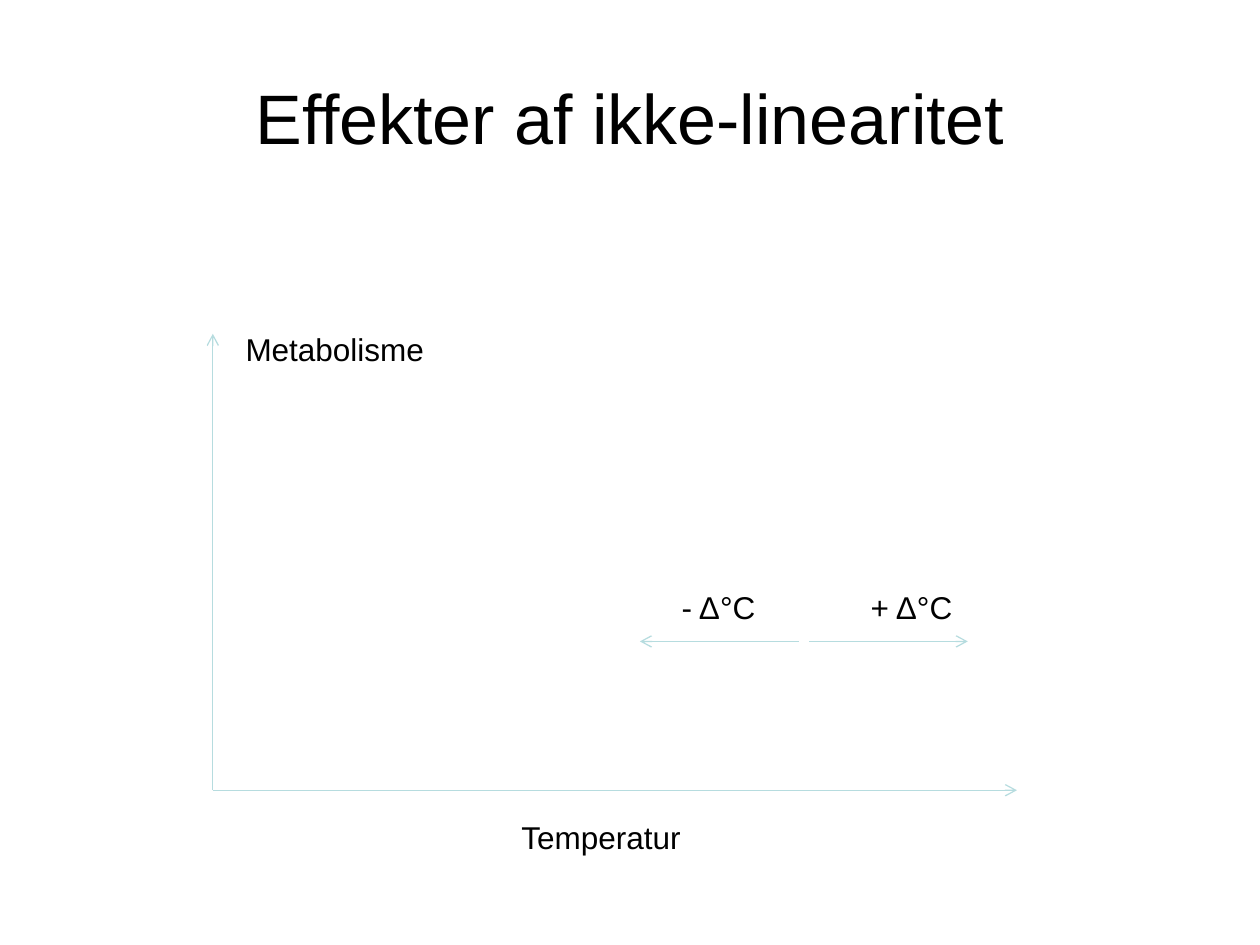
from pptx import Presentation
from pptx import util as u
from pptx.dml.color import RGBColor
from pptx.enum import shapes, text
from pptx.oxml.ns import qn
from lxml import etree


def colour(value):
    return RGBColor.from_string(value)


class Painter:
    """Holds the style and the page being drawn; lengths are in cm."""

    FONT = "Arial"
    INK = "000000"
    AXIS = "B6DCDF"
    LINE_WIDTH = 0.75

    def __init__(self, page):
        self.page = page

    def label(self, words, left, top, width, height=1.02, size=18,
              align=text.PP_ALIGN.LEFT, anchor=text.MSO_ANCHOR.TOP):
        box = self.page.shapes.add_textbox(
            u.Cm(left), u.Cm(top), u.Cm(width), u.Cm(height))
        frame = box.text_frame
        frame.word_wrap = True
        frame.margin_right = frame.margin_left if align == text.PP_ALIGN.CENTER else 0
        frame.vertical_anchor = anchor
        para = frame.paragraphs[0]
        para.text = words
        para.alignment = align
        para.font.name = self.FONT
        para.font.size = u.Pt(size)
        para.font.color.rgb = colour(self.INK)

    def arrow(self, start, end):
        line = self.page.shapes.add_connector(
            shapes.MSO_CONNECTOR.STRAIGHT, *map(u.Cm, start + end))
        line.line.color.rgb = colour(self.AXIS)
        line.line.width = u.Pt(self.LINE_WIDTH)
        # Open arrowhead at the end, no shadow
        etree.SubElement(line.line._get_or_add_ln(), qn("a:tailEnd"), type="arrow")
        etree.SubElement(line._element.spPr, qn("a:effectLst"))


def main():
    deck = Presentation()
    deck.slide_width, deck.slide_height = u.Cm(25.4), u.Cm(19.05)
    painter = Painter(deck.slides.add_slide(deck.slide_layouts[6]))

    # Title
    painter.label("Effekter af ikke-linearitet", 1.27, 0.76, 22.86, 3.18, size=40,
                  align=text.PP_ALIGN.CENTER, anchor=text.MSO_ANCHOR.MIDDLE)

    # Axes with their names
    origin = (4.29, 15.93)
    painter.arrow(origin, (20.5, origin[1]))
    painter.arrow(origin, (origin[0], 6.73))
    painter.label("Temperatur", 10.26, 16.36, 5.31)
    painter.label("Metabolisme", 4.7, 6.53, 4.19)

    # Temperature changes in both directions
    change_y, reach = 12.93, 3.2
    for words, left, start, direction in (("- Δ°C", 13.49, 16.1, -1),
                                          ("+ Δ°C", 17.3, 16.31, 1)):
        painter.arrow((start, change_y), (start + direction * reach, change_y))
        painter.label(words, left, 11.73, 2.21)

    deck.save("out.pptx")


if __name__ == "__main__":
    main()
